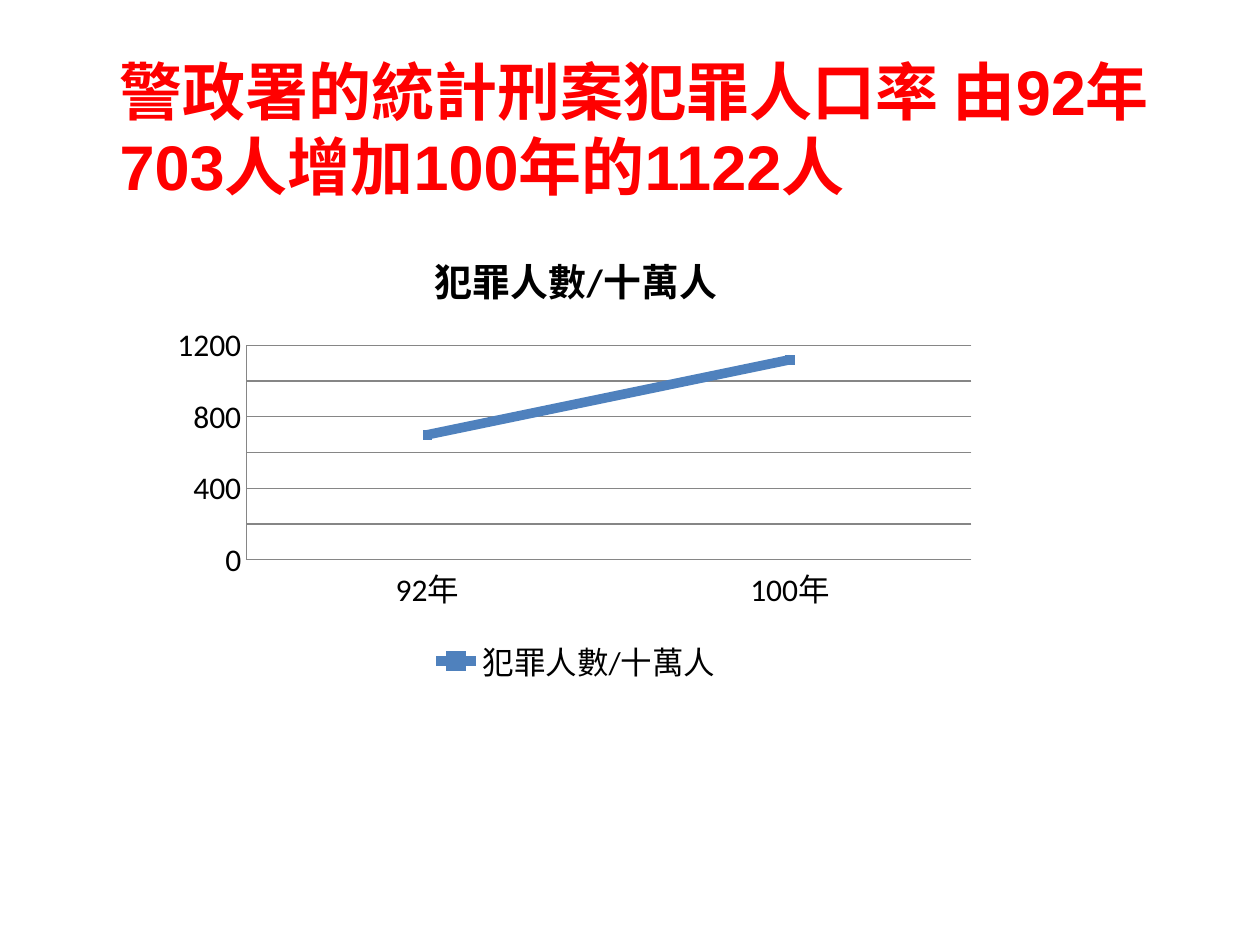
import pptx
import pptx.util
import pptx.chart.data
import pptx.dml.color
import pptx.enum.chart
import pptx.enum.text
import pptx.oxml
from pptx.oxml.ns import nsdecls

Pt = pptx.util.Pt
RGBColor = pptx.dml.color.RGBColor

RED = RGBColor(0xFF, 0x00, 0x00)
BLACK = RGBColor(0x00, 0x00, 0x00)
BLUE = RGBColor(0x4F, 0x81, 0xBD)
GRAY = RGBColor(0x86, 0x86, 0x86)


def style_font(font, name, size, color, bold=False):
    font.name = name
    font.size = Pt(size)
    font.bold = bold
    font.color.rgb = color


def style_line(line, color, width):
    line.color.rgb = color
    line.width = Pt(width)


def add_heading(slide, left, top, width, height):
    shape = slide.shapes.add_textbox(Pt(left), Pt(top), Pt(width), Pt(height))
    frame = shape.text_frame
    frame.word_wrap = True
    frame.vertical_anchor = pptx.enum.text.MSO_ANCHOR.MIDDLE
    paragraph = frame.paragraphs[0]
    paragraph.text = "警政署的統計刑案犯罪人口率 由92年703人增加100年的1122人"
    style_font(paragraph.font, "Arial", 36, RED, True)


def set_plot_layout(chart, left, top, width, height):
    plot_area = chart.plots[0]._element.getparent()
    for layout in plot_area.findall(pptx.oxml.ns.qn("c:layout")):
        plot_area.remove(layout)
    plot_area.insert(0, pptx.oxml.parse_xml(
        f'<c:layout {nsdecls("c")}><c:manualLayout>'
        '<c:layoutTarget val="inner"/><c:xMode val="edge"/><c:yMode val="edge"/>'
        f'<c:x val="{left}"/><c:y val="{top}"/><c:w val="{width}"/><c:h val="{height}"/>'
        '</c:manualLayout></c:layout>'))


def add_crime_chart(slide, left, top, width, height):
    label = "犯罪人數/十萬人"
    data = pptx.chart.data.CategoryChartData()
    data.categories = ["92年", "100年"]
    data.add_series(label, [700, 1120])
    chart = slide.shapes.add_chart(
        pptx.enum.chart.XL_CHART_TYPE.LINE_MARKERS_STACKED,
        Pt(left), Pt(top), Pt(width), Pt(height), data).chart
    style_font(chart.font, "Calibri", 18, BLACK)
    chart.plots[0].vary_by_categories = False

    chart.has_title = True
    paragraph = chart.chart_title.text_frame.paragraphs[0]
    paragraph.text = label
    style_font(paragraph.font, "Calibri", 21.6, BLACK, True)

    chart.has_legend = True
    chart.legend.position = pptx.enum.chart.XL_LEGEND_POSITION.BOTTOM
    chart.legend.include_in_layout = False

    for axis in (chart.category_axis, chart.value_axis):
        axis.major_tick_mark = pptx.enum.chart.XL_TICK_MARK.NONE
        axis.minor_tick_mark = pptx.enum.chart.XL_TICK_MARK.NONE
        style_line(axis.format.line, GRAY, 0.75)
    chart.value_axis.minimum_scale = 0
    chart.value_axis.maximum_scale = 1200
    chart.value_axis.major_unit = 200
    style_line(chart.value_axis.major_gridlines.format.line, GRAY, 0.75)

    series = chart.plots[0].series[0]
    series.smooth = False
    style_line(series.format.line, BLUE, 5.5)
    marker = series.marker
    marker.style = pptx.enum.chart.XL_MARKER_STYLE.SQUARE
    marker.size = 5
    marker.format.fill.solid()
    marker.format.fill.fore_color.rgb = BLUE
    marker.format.line.color.rgb = BLUE
    set_plot_layout(chart, 0.1, 0.26, 0.88, 0.46)


def main():
    presentation = pptx.Presentation()
    presentation.slide_width = Pt(720)
    presentation.slide_height = Pt(540)
    slide = presentation.slides.add_slide(presentation.slide_layouts[6])
    add_heading(slide, 61.2, 25.92, 658.8, 94.32)
    add_crime_chart(slide, 93.6, 128.16, 470.88, 266.4)
    presentation.save("out.pptx")


if __name__ == "__main__":
    main()
